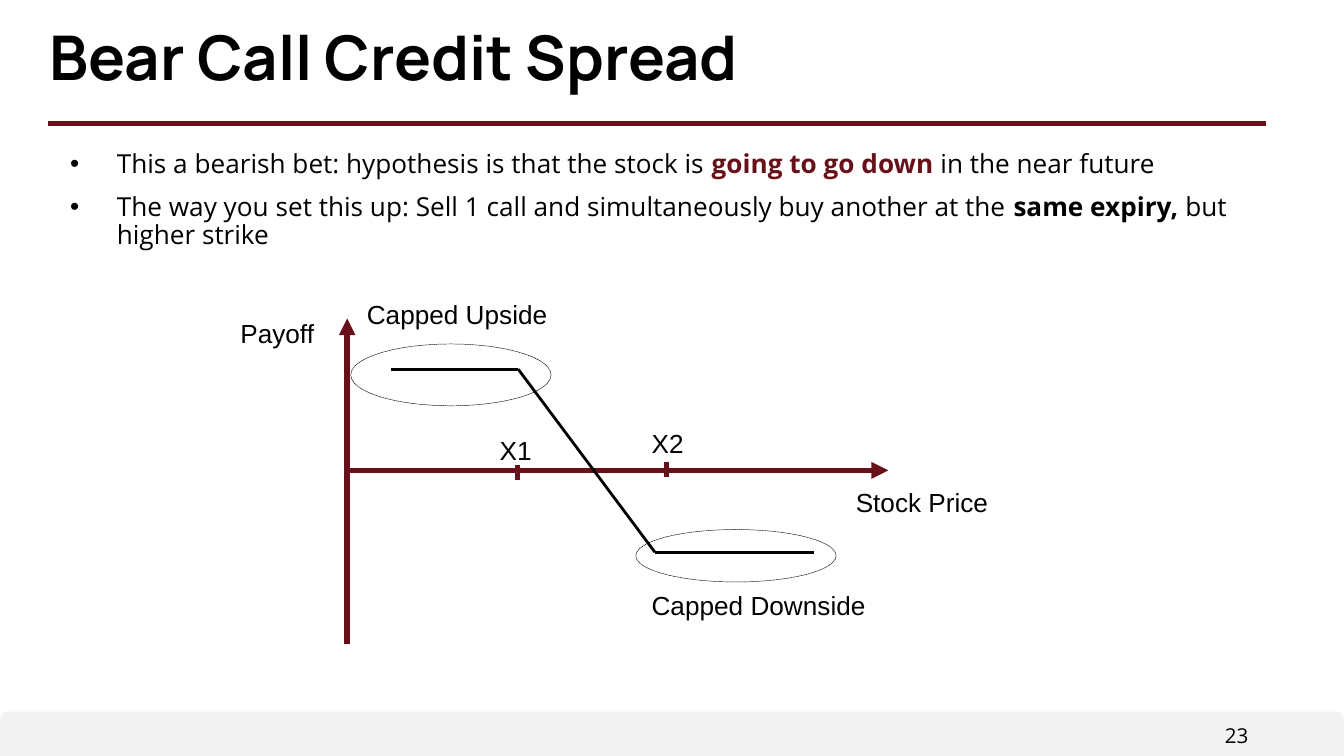
from pptx import Presentation
from pptx.dml.color import RGBColor
from pptx.enum import dml, shapes, text
from pptx.oxml.ns import qn
from pptx.util import Pt
from lxml import etree

# Content
TITLE = "Bear Call Credit Spread"
PAGE_NUMBER = "23"
BLACK, MAROON, AXIS, FOOTER = "000000", "67121B", "671019", "F2F2F2"
BULLETS = [  # runs of (text, bold, colour)
    [("This a bearish bet: hypothesis is that the stock is ", False, BLACK),
     ("going to go down ", True, MAROON),
     ("in the near future", False, BLACK)],
    [("The way you set this up: Sell 1 call and simultaneously buy another at the ", False, BLACK),
     ("same expiry, ", True, BLACK),
     ("but higher strike", False, BLACK)],
]

# Payoff diagram, in points
AXIS_X, AXIS_Y = 186, 252
STRIKES = [(277.2, 253.1), (357.1, 251.6)]  # tick centres
TICK = 8
AXES = [((AXIS_X, 344.9), (AXIS_X, 170.6)), ((AXIS_X, AXIS_Y), (475.9, AXIS_Y))]
PAYOFF = [(209.5, 197.8), (277.6, 197.8), (350.9, 295.9), (436.3, 295.9)]
CAPS = [(187.9, 184.3, 107.3, 33.1), (340.6, 283.7, 107.3, 28.1)]
LABELS = [  # text, left, top, width
    ("Stock Price", 451.4, 257, 139.7),
    ("Payoff", 121.7, 166.3, 72),
    ("X1", 260.6, 229, 34.6),
    ("X2", 342, 225.4, 31.7),
    ("Capped Downside", 342, 312.5, 129.6),
    ("Capped Upside", 189.4, 156.2, 111.6),
]

prs = Presentation()
prs.slide_width, prs.slide_height = Pt(720), Pt(405)
slide = prs.slides.add_slide(prs.slide_layouts[1])


def colour(target, value):
    target.rgb = RGBColor.from_string(value)


def place(shape, left, top, width, height):
    shape.left, shape.top, shape.width, shape.height = map(Pt, (left, top, width, height))


def style(font, name, size, value=BLACK, bold=False):
    font.name, font.size, font.bold = name, Pt(size), bold
    colour(font.color, value)


def set_frame(frame, side=7.2, edge=3.6):
    frame.word_wrap = True
    frame.auto_size = text.MSO_AUTO_SIZE.NONE
    frame.vertical_anchor = text.MSO_ANCHOR.TOP
    frame.margin_left = frame.margin_right = Pt(side)
    frame.margin_top = frame.margin_bottom = Pt(edge)


def add_line(start, end, value, width, arrow=False):
    line = slide.shapes.add_connector(shapes.MSO_CONNECTOR.STRAIGHT,
                                      *map(Pt, (*start, *end)))
    colour(line.line.color, value)
    line.line.width = Pt(width)
    if arrow:
        etree.SubElement(line.line._get_or_add_ln(), qn("a:tailEnd"), type="triangle")
    etree.SubElement(line._element.spPr, qn("a:effectLst"))


def add_label(words, left, top, width, height, font="Arial", size=14):
    box = slide.shapes.add_textbox(*map(Pt, (left, top, width, height)))
    set_frame(box.text_frame)
    box.text_frame.text = words
    paragraph = box.text_frame.paragraphs[0]
    style(paragraph.runs[0].font, font, size)
    return paragraph


# Footer and rule
footer = slide.shapes.add_shape(shapes.MSO_SHAPE.ROUND_2_SAME_RECTANGLE,
                                *map(Pt, (0, 381.2, 720, 23.8)))
footer.shadow.inherit = False
footer.fill.solid()
colour(footer.fill.fore_color, FOOTER)
footer.line.fill.background()
add_label(PAGE_NUMBER, 584.6, 383.8, 91.4, 18, "Open Sans", 11).alignment = text.PP_ALIGN.RIGHT
add_line((25.9, 66.2), (678.2, 66.2), MAROON, 2.5)

# Title
title = slide.shapes.title
place(title, 21.6, 11.5, 670.3, 49)
set_frame(title.text_frame, 5, 2.9)
title.text_frame.text = TITLE
heading = title.text_frame.paragraphs[0]
heading.alignment = text.PP_ALIGN.LEFT
heading.line_spacing = 0.9
style(heading.runs[0].font, "Manrope", 33, bold=True)

# Bullets
body = slide.placeholders[1]
place(body, 21.6, 77.8, 670.3, 290.9)
set_frame(body.text_frame, 5, 2.9)
for i, parts in enumerate(BULLETS):
    paragraph = body.text_frame.add_paragraph() if i else body.text_frame.paragraphs[0]
    paragraph.line_spacing = 0.9
    paragraph.space_before = Pt(8 if i else 0)
    properties = paragraph._p.get_or_add_pPr()
    properties.set("marL", str(Pt(36)))
    properties.set("indent", str(Pt(-25)))
    for words, bold, value in parts:
        run = paragraph.add_run()
        run.text = words
        style(run.font, "Open Sans", 14, value, bold)

# Axes, strike ticks and payoff line
for start, end in AXES:
    add_line(start, end, AXIS, 3, arrow=True)
for x, y in STRIKES:
    add_line((x, y - TICK / 2), (x, y + TICK / 2), AXIS, 3)
for start, end in zip(PAYOFF, PAYOFF[1:]):
    add_line(start, end, BLACK, 1.5)

# Capped regions
for cap in CAPS:
    ellipse = slide.shapes.add_shape(shapes.MSO_SHAPE.OVAL, *map(Pt, cap))
    ellipse.shadow.inherit = False
    ellipse.fill.background()
    colour(ellipse.line.color, BLACK)
    ellipse.line.width = Pt(0.25)
    ellipse.line.dash_style = dml.MSO_LINE.SQUARE_DOT

# Labels
for words, left, top, width in LABELS:
    add_label(words, left, top, width, 24.5)

prs.save("out.pptx")
